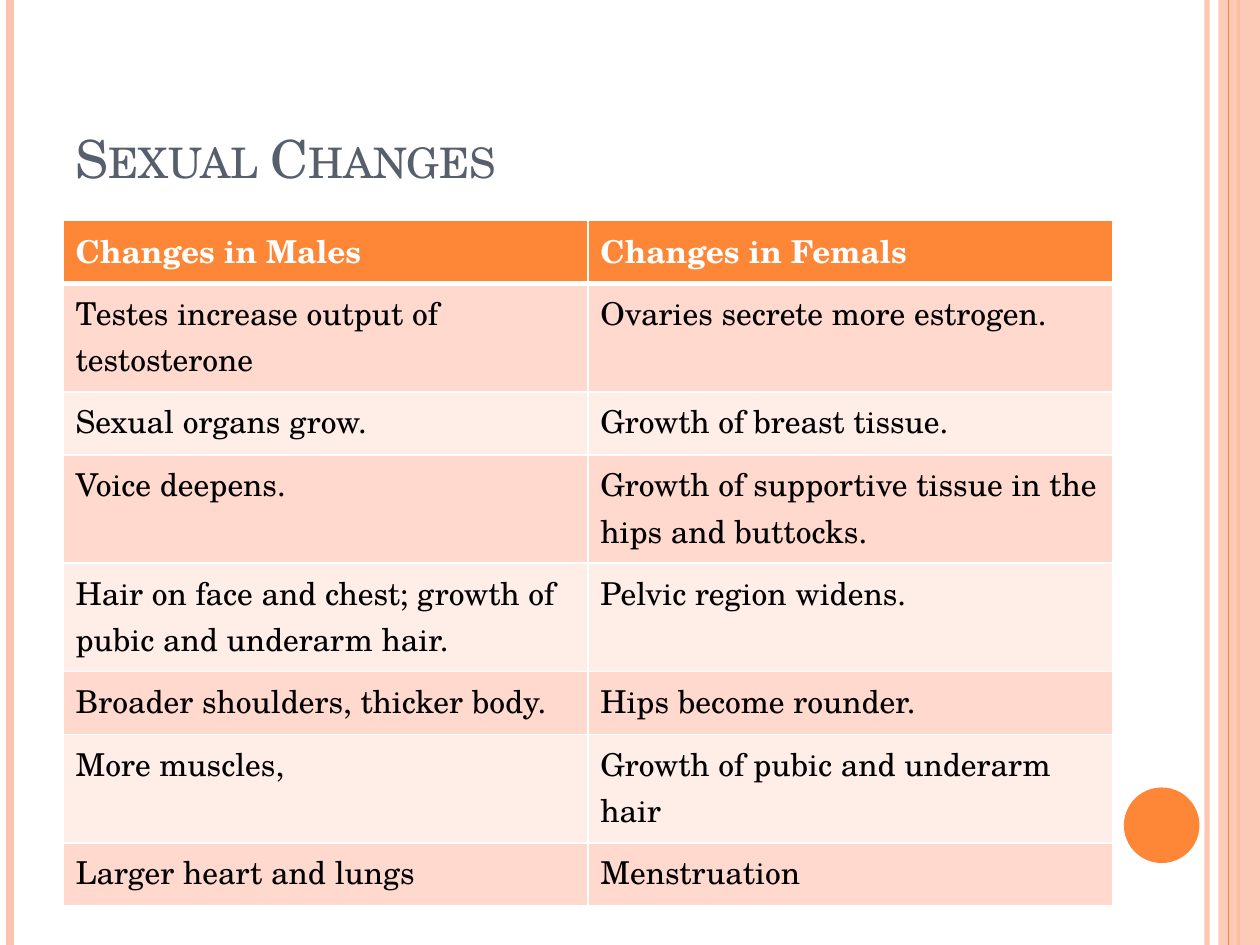
from lxml import etree
from pptx import Presentation
from pptx.dml.color import RGBColor
from pptx.enum.shapes import MSO_CONNECTOR, MSO_SHAPE
from pptx.enum.text import MSO_ANCHOR
from pptx.oxml.ns import qn
from pptx.util import Inches, Pt

STRAIGHT = MSO_CONNECTOR.STRAIGHT
RECTANGLE, OVAL = MSO_SHAPE.RECTANGLE, MSO_SHAPE.OVAL
BOTTOM = MSO_ANCHOR.BOTTOM

ORANGE = RGBColor(0xFE, 0x86, 0x37)
PEACH = RGBColor(0xFE, 0xC3, 0xAE)
BAND_DARK = RGBColor(0xFF, 0xD9, 0xCE)
BAND_LIGHT = RGBColor(0xFF, 0xED, 0xE8)
SLATE = RGBColor(0x57, 0x5F, 0x6D)
WHITE = RGBColor(0xFF, 0xFF, 0xFF)
BLACK = RGBColor(0, 0, 0)
FONT = "TeX Gyre Schola"

# Content
TITLE = "Sexual Changes"
ROWS = [
    ("Changes in Males", "Changes in Femals"),
    ("Testes increase output of testosterone", "Ovaries secrete more estrogen."),
    ("Sexual organs grow.", "Growth of breast tissue."),
    ("Voice deepens.", "Growth of supportive tissue in the hips and buttocks."),
    ("Hair on face and chest; growth of pubic and underarm hair.", "Pelvic region widens."),
    ("Broader shoulders, thicker body.", "Hips become rounder."),
    ("More muscles,", "Growth of pubic and underarm hair"),
    ("Larger heart and lungs", "Menstruation"),
]
LINES_PER_ROW = [1, 2, 1, 2, 2, 1, 2, 1]
ROW_HEIGHT = {1: 0.5, 2: 0.86}
TABLE_LEFT, TABLE_TOP, TABLE_WIDTH = 0.5, 1.75, 8.33
SLIDE_WIDTH, SLIDE_HEIGHT = 10, 7.5

presentation = Presentation()
presentation.slide_width = Inches(SLIDE_WIDTH)
presentation.slide_height = Inches(SLIDE_HEIGHT)
slide = presentation.slides.add_slide(presentation.slide_layouts[6])


def set_opacity(element, percent):
    color = next(element.iter(qn("a:srgbClr")))
    etree.SubElement(color, qn("a:alpha"), val=str(percent * 1000))


def add_stripe(x, color, width, opacity=100):
    stripe = slide.shapes.add_connector(
        STRAIGHT, Inches(x), 0, Inches(x), Inches(SLIDE_HEIGHT))
    stripe.line.color.rgb = color
    stripe.line.width = Pt(width)
    if opacity < 100:
        set_opacity(stripe.line._get_or_add_ln(), opacity)
    etree.SubElement(stripe._element.spPr, qn("a:effectLst"))


def add_plain_shape(kind, left, top, width, height, color):
    shape = slide.shapes.add_shape(
        kind, Inches(left), Inches(top), Inches(width), Inches(height))
    shape.shadow.inherit = False
    shape.fill.solid()
    shape.fill.fore_color.rgb = color
    shape.line.fill.background()
    return shape


def format_text(text_frame, size, color, bold=False):
    for run in text_frame.paragraphs[0].runs:
        run.font.name = FONT
        run.font.size = Pt(size)
        run.font.bold = bold
        run.font.color.rgb = color


def set_borders(cell, bottom_width):
    properties = cell._tc.get_or_add_tcPr()
    widths = {"lnL": 1, "lnR": 1, "lnT": 1, "lnB": bottom_width}
    for position, (side, width) in enumerate(widths.items()):
        border = etree.Element(qn(f"a:{side}"), w=str(Pt(width)))
        fill = etree.SubElement(border, qn("a:solidFill"))
        etree.SubElement(fill, qn("a:srgbClr"), val=str(WHITE))
        properties.insert(position, border)


# Side stripes and circle
add_stripe(9.58, PEACH, 3, opacity=93)
add_stripe(0.08, PEACH, 4.5)
add_stripe(9.83, ORANGE, 1.5)
side_band = add_plain_shape(RECTANGLE, 9.67, 0, 0.33, SLIDE_HEIGHT, PEACH)
set_opacity(side_band._element.spPr, 87)
add_stripe(9.75, ORANGE, 0.75)
add_plain_shape(OVAL, 8.92, 6.25, 0.6, 0.6, ORANGE)

# Title in small capitals
title = slide.shapes.add_textbox(Inches(0.5), Inches(0.3), Inches(8.17), Inches(1.25))
title.text_frame.word_wrap = True
title.text_frame.vertical_anchor = BOTTOM
title.text_frame.text = TITLE
format_text(title.text_frame, 30, SLATE)
title.text_frame.paragraphs[0].runs[0].font._element.set("cap", "small")

# Table
heights = [ROW_HEIGHT[lines] for lines in LINES_PER_ROW]
table = slide.shapes.add_table(
    len(ROWS), len(ROWS[0]), Inches(TABLE_LEFT), Inches(TABLE_TOP),
    Inches(TABLE_WIDTH), Inches(sum(heights))).table
for column in table.columns:
    column.width = Inches(TABLE_WIDTH / len(ROWS[0]))
for row_index, (texts, height) in enumerate(zip(ROWS, heights)):
    table.rows[row_index].height = Inches(height)
    is_header = row_index == 0
    band = BAND_DARK if row_index % 2 else BAND_LIGHT
    for column_index, text in enumerate(texts):
        cell = table.cell(row_index, column_index)
        cell.text_frame.text = text
        format_text(cell.text_frame, 18, WHITE if is_header else BLACK, is_header)
        cell.fill.solid()
        cell.fill.fore_color.rgb = ORANGE if is_header else band
        set_borders(cell, 3 if is_header else 1)

presentation.save("out.pptx")
